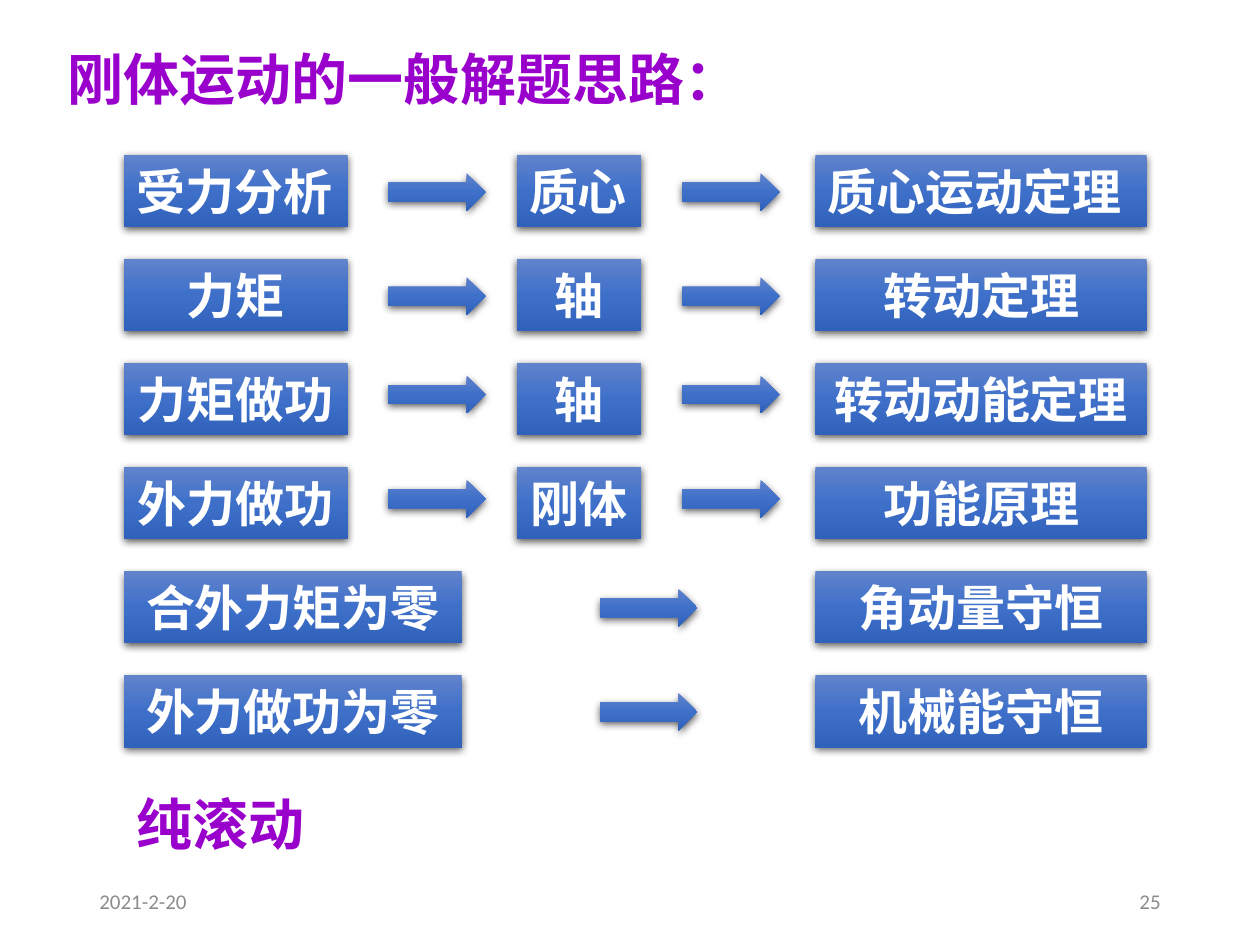
from lxml.etree import SubElement
from pptx import Presentation
from pptx.dml.color import RGBColor
from pptx.enum.shapes import MSO_SHAPE
from pptx.enum.text import MSO_ANCHOR, PP_ALIGN
from pptx.oxml import parse_xml
from pptx.oxml.ns import nsdecls, qn
from pptx.util import Pt

COLORS = {"title": "9900CC", "text": "FFFFFF", "foot": "8C8C8C",
          "top": "6183CB", "mid": "3E70CA", "low": "3062BB", "shade": "000000"}
HAN, LATIN = "Noto Sans CJK SC", "Calibri"
LEFT, MID, RIGHT = PP_ALIGN.LEFT, PP_ALIGN.CENTER, PP_ALIGN.RIGHT


class Deck:
    def __init__(self, width, height):
        self.prs = Presentation()
        self.prs.slide_width, self.prs.slide_height = Pt(width), Pt(height)
        self.slide = self.prs.slides.add_slide(self.prs.slide_layouts[6])

    def label(self, shape, text, size, color, align, font=HAN, bold=True):
        para = shape.text_frame.paragraphs[0]
        para.text, para.alignment = text, align
        para.font.size, para.font.bold = Pt(size), bold
        para.font.color.rgb = RGBColor.from_string(COLORS[color])
        para.font.name = font
        props = para._p.pPr.find(qn("a:defRPr"))
        SubElement(props, qn("a:ea")).set("typeface", font)

    def glossy(self, kind, left, top, width, height):
        """Add a shape with a vertical gradient, no outline and a soft shadow."""
        shape = self.slide.shapes.add_shape(
            kind, Pt(left), Pt(top), Pt(width), Pt(height))
        shape.line.fill.background()
        stops = "".join(
            f'<a:gs pos="{pos}"><a:srgbClr val="{COLORS[name]}"/></a:gs>'
            for pos, name in ((0, "top"), (50000, "mid"), (100000, "low")))
        props = shape.element.spPr
        props.find(qn("a:ln")).addprevious(parse_xml(
            f'<a:gradFill {nsdecls("a")} rotWithShape="1"><a:gsLst>{stops}</a:gsLst>'
            '<a:lin ang="5400000" scaled="0"/></a:gradFill>'))
        props.append(parse_xml(
            f'<a:effectLst {nsdecls("a")}><a:outerShdw blurRad="{Pt(4.5)}" '
            f'dist="{Pt(1.5)}" dir="5400000" rotWithShape="0">'
            f'<a:srgbClr val="{COLORS["shade"]}"><a:alpha val="63000"/></a:srgbClr>'
            '</a:outerShdw></a:effectLst>'))
        return shape

    def box(self, text, left, top, width, align=MID):
        shape = self.glossy(MSO_SHAPE.RECTANGLE, left, top, width, 41.2)
        shape.text_frame.word_wrap = True
        shape.text_frame.vertical_anchor = MSO_ANCHOR.TOP
        self.label(shape, text, 28, "text", align)

    def arrow(self, left, top):
        self.glossy(MSO_SHAPE.RIGHT_ARROW, left, top, 55.5, 21.6)

    def heading(self, text, left, top, width):
        shape = self.slide.shapes.add_textbox(Pt(left), Pt(top), Pt(width), Pt(46))
        shape.text_frame.word_wrap = False
        self.label(shape, text, 32, "title", LEFT)

    def footer(self, text, left, align):
        shape = self.slide.shapes.add_textbox(Pt(left), Pt(500.5), Pt(162), Pt(28.8))
        shape.text_frame.word_wrap = True
        shape.text_frame.vertical_anchor = MSO_ANCHOR.MIDDLE
        self.label(shape, text, 12, "foot", align, LATIN, False)


# cause, object (if any), law, drop of the arrows below the row's top
ROWS = [
    ("受力分析", "质心", "质心运动定理", 10.5),
    ("力矩", "轴", "转动定理", 10.5),
    ("力矩做功", "轴", "转动动能定理", 7.2),
    ("外力做功", "刚体", "功能原理", 7.2),
    ("合外力矩为零", None, "角动量守恒", 10),
    ("外力做功为零", None, "机械能守恒", 10),
]
TOP, PITCH = 88.5, 59.5


def main():
    deck = Deck(720, 540)
    deck.heading("刚体运动的一般解题思路：", 31.7, 21.6, 402.5)
    for i, (cause, body, law, drop) in enumerate(ROWS):
        top = TOP + i * PITCH
        align = MID if i else LEFT
        deck.box(cause, 70.8, top, 127.8 if body else 193, align)
        if body:
            deck.box(body, 295.2, top, 71.3, align)
        for left in (222, 390) if body else (343,):
            deck.arrow(left, top + drop)
        deck.box(law, 466, top, 189.3, align)
    deck.heading("纯滚动", 70.8, 447.8, 111.6)
    deck.footer("2021-2-20", 49.7, LEFT)
    deck.footer("25", 508.3, RIGHT)
    deck.prs.save("out.pptx")


if __name__ == "__main__":
    main()
